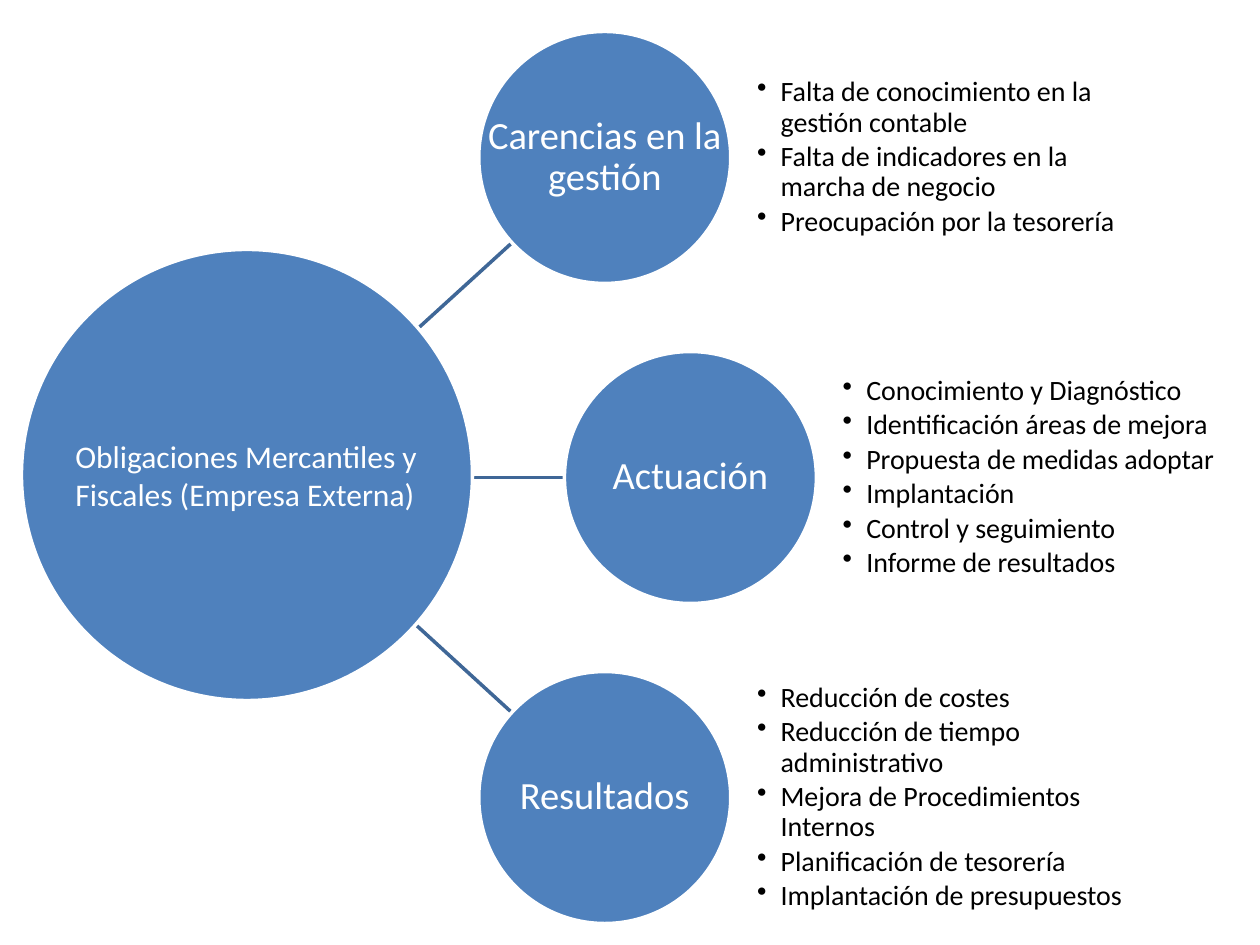
from lxml import etree
from pptx import Presentation
from pptx.dml.color import RGBColor
from pptx.enum.shapes import MSO_CONNECTOR as Connector, MSO_SHAPE as Shape
from pptx.enum.text import MSO_ANCHOR as Anchor, PP_ALIGN as Align
from pptx.oxml.ns import qn
from pptx.util import Pt

COLORS = {"circle": "4F81BD", "spoke": "3F6797", "light": "FFFFFF", "dark": "000000"}
FONT = "Calibri"

# Hub and branch geometry, in points
HUB = (12.24, 142.56, 257.76)
HUB_LABEL = (36, 246.24, 216, 51.12)
NODE_SIZE = 144
FIRST_TOP, NODE_PITCH = 18, 182.88
LIST_OFFSET, LIST_WIDTH = 159, 216.72
BULLET_INDENT = 13.5

# Each branch: heading, left edge of its circle, spoke (x1, y1, x2, y2), details
BRANCHES = [
    ("Carencias en la gestión", 273.6, (235.4, 190.8, 292.3, 139), [
        "Falta de conocimiento en la gestión contable",
        "Falta de indicadores en la marcha de negocio",
        "Preocupación por la tesorería"]),
    ("Actuación", 322.56, (235.4, 272.88, 322.56, 272.88), [
        "Conocimiento y Diagnóstico",
        "Identificación áreas de mejora",
        "Propuesta de medidas adoptar",
        "Implantación",
        "Control y seguimiento",
        "Informe de resultados"]),
    ("Resultados", 273.6, (235.4, 355, 292.3, 407), [
        "Reducción de costes",
        "Reducción de tiempo administrativo",
        "Mejora de Procedimientos Internos",
        "Planificación de tesorería",
        "Implantación de presupuestos"]),
]


def rgb(name):
    return RGBColor.from_string(COLORS[name])


def write(paragraph, text, size, color, align=Align.LEFT, spacing=None, after=0):
    paragraph.alignment = align
    paragraph.line_spacing = spacing
    paragraph.space_after = Pt(after)
    run = paragraph.add_run()
    run.text = text
    run.font.name, run.font.size = FONT, Pt(size)
    run.font.color.rgb = rgb(color)


class Diagram:
    def __init__(self, slide):
        self.shapes = slide.shapes

    def spoke(self, *ends):
        line = self.shapes.add_connector(Connector.STRAIGHT, *map(Pt, ends))
        line.line.color.rgb = rgb("spoke")
        line.line.width = Pt(2)
        etree.SubElement(line._element.spPr, qn("a:effectLst"))

    def circle(self, left, top, size):
        disc = self.shapes.add_shape(Shape.OVAL, Pt(left), Pt(top), Pt(size), Pt(size))
        disc.shadow.inherit = False
        disc.fill.solid()
        disc.fill.fore_color.rgb = rgb("circle")
        disc.line.color.rgb = rgb("light")
        disc.line.width = Pt(2)

    def frame(self, box, inset_x=0, inset_y=0, anchor=Anchor.MIDDLE):
        frame = self.shapes.add_textbox(*map(Pt, box)).text_frame
        frame.word_wrap = True
        frame.vertical_anchor = anchor
        frame.margin_left = frame.margin_right = Pt(inset_x)
        frame.margin_top = frame.margin_bottom = Pt(inset_y)
        return frame

    def heading(self, text, box):
        frame = self.frame(box, 1.4, 1.4)
        write(frame.paragraphs[0], text, 22, "light", Align.CENTER, 0.9)

    def hub_label(self, text, box):
        frame = self.frame(box, 7.2, 3.6, Anchor.TOP)
        write(frame.paragraphs[0], text, 18, "light")

    def bullets(self, items, box):
        frame = self.frame(box)
        for index, item in enumerate(items):
            paragraph = frame.add_paragraph() if index else frame.paragraphs[0]
            write(paragraph, item, 16, "dark", spacing=0.9, after=2.4)
            props = paragraph._p.get_or_add_pPr()
            props.set("marL", str(Pt(BULLET_INDENT)))
            props.set("indent", str(-Pt(BULLET_INDENT)))
            etree.SubElement(props, qn("a:buChar"), char="•")


def main():
    prs = Presentation()
    prs.slide_width, prs.slide_height = Pt(720), Pt(540)
    diagram = Diagram(prs.slides.add_slide(prs.slide_layouts[6]))

    # Spokes lie behind the circles
    for _, _, ends, _ in BRANCHES:
        diagram.spoke(*ends)
    diagram.circle(*HUB)

    # Branch circles with their headings and lists
    for row, (heading, left, _, details) in enumerate(BRANCHES):
        top = FIRST_TOP + row * NODE_PITCH
        diagram.circle(left, top, NODE_SIZE)
        diagram.heading(heading, (left, top, NODE_SIZE, NODE_SIZE))
        diagram.bullets(details, (left + LIST_OFFSET, top, LIST_WIDTH, NODE_SIZE))

    diagram.hub_label("Obligaciones Mercantiles y Fiscales (Empresa Externa)", HUB_LABEL)
    prs.save("out.pptx")


if __name__ == "__main__":
    main()
